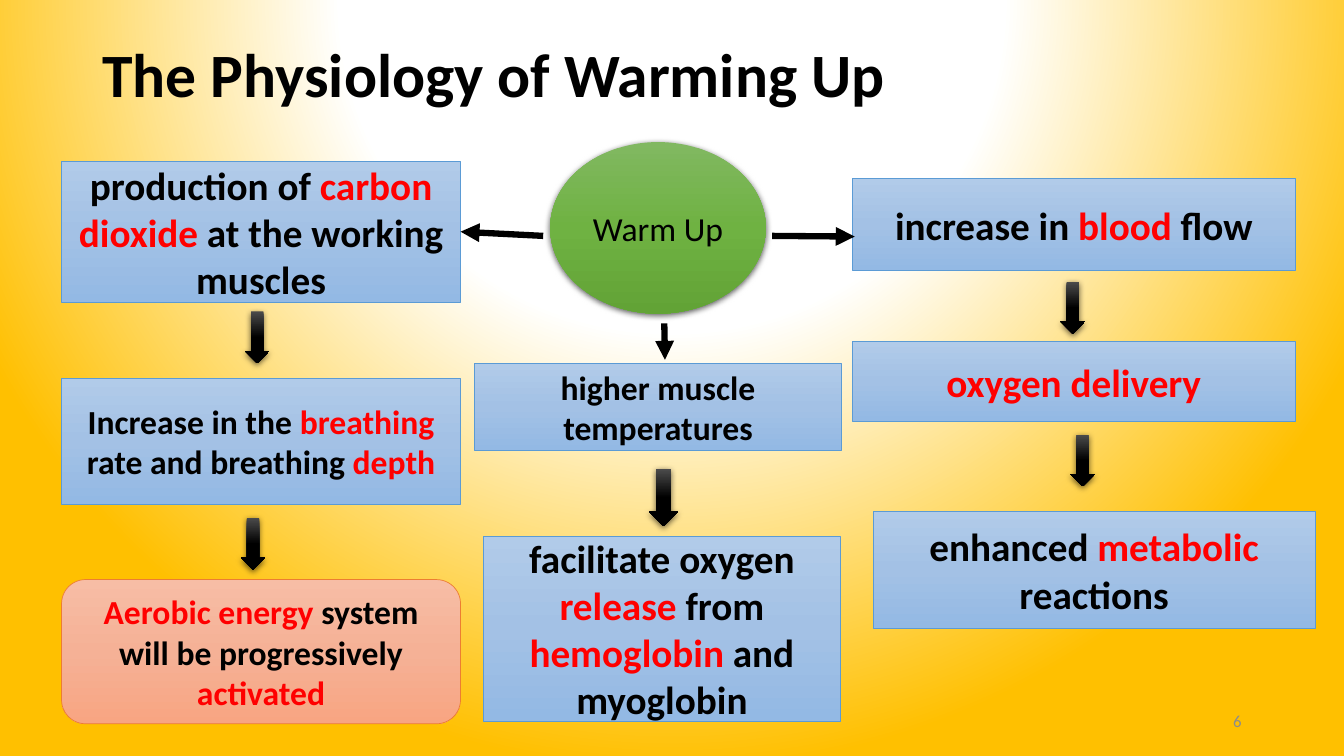
from lxml.etree import SubElement
from pptx import Presentation
from pptx.dml.color import RGBColor
from pptx.enum.shapes import MSO_CONNECTOR as CONNECTOR, MSO_SHAPE as SHAPE
from pptx.enum.text import MSO_ANCHOR as ANCHOR, MSO_AUTO_SIZE as AUTO_SIZE, PP_ALIGN as ALIGN
from pptx.oxml.ns import qn
from pptx.util import Pt

COLORS = {"text": "000000", "key": "FF0000", "number": "8C8C8C",
          "blue_line": "5B9BD5", "orange_line": "ED7D31"}
GRADIENTS = {
    "page": [(0, "FFFFFF"), (43, "FFFFFF"), (100, "FFC000")],
    "blue": [(0, "B1CBE9"), (50, "A3C1E5"), (100, "93B9E4")],
    "orange": [(0, "F7BDA5"), (50, "F5B196"), (100, "F8A582")],
    "green": [(0, "81B861"), (50, "6FB242"), (100, "62A336")],
    "black": [(0, "4B4B4B"), (50, "000000"), (100, "000000")],
}


def color(name):
    return RGBColor.from_string(COLORS[name])


def set_stops(element, name):
    gradient = next(element.iter(qn("a:gradFill")))
    stops = gradient.find(qn("a:gsLst"))
    for stop in list(stops):
        stops.remove(stop)
    for position, value in GRADIENTS[name]:
        stop = SubElement(stops, qn("a:gs"), pos=str(position * 1000))
        SubElement(stop, qn("a:srgbClr"), val=value)
    return gradient


def paint_background(page):
    page.background.fill.gradient()
    gradient = set_stops(page._element, "page")
    gradient.remove(gradient.find(qn("a:lin")))
    circle = SubElement(gradient, qn("a:path"), path="circle")
    SubElement(circle, qn("a:fillToRect"), l="50000", t="-80000", r="50000", b="180000")


def write(box, text, size, bold=True, align=ALIGN.CENTER, ink="text"):
    frame = box.text_frame
    frame.word_wrap = True
    frame.auto_size = AUTO_SIZE.NONE
    frame.vertical_anchor = ANCHOR.MIDDLE
    para = frame.paragraphs[0]
    para.alignment = align
    para.font.name = "Calibri"
    para.font.size = Pt(size)
    para.font.bold = bold
    for index, part in enumerate(text.split("*")):
        if part:
            span = para.add_run()
            span.text = part
            span.font.color.rgb = color("key" if index % 2 else ink)
    return para


def add_box(page, kind, bounds, gradient, line=None, shadow=False):
    box = page.shapes.add_shape(kind, *map(Pt, bounds))
    box.shadow.inherit = False
    box.fill.gradient()
    box.fill.gradient_angle = 270
    set_stops(box._element, gradient)
    if line:
        box.line.color.rgb = color(line)
        box.line.width = Pt(0.5)
    else:
        box.line.fill.background()
    if shadow:
        effects = box._element.spPr.find(qn("a:effectLst"))
        outer = SubElement(effects, qn("a:outerShdw"), blurRad=str(Pt(4.5)), dist=str(Pt(1.5)),
                           dir="5400000", algn="ctr", rotWithShape="0")
        black = SubElement(outer, qn("a:srgbClr"), val="000000")
        SubElement(black, qn("a:alpha"), val="63000")
    return box


def add_arrow(page, start, end):
    arrow = page.shapes.add_connector(CONNECTOR.STRAIGHT, *map(Pt, start + end))
    arrow.line.color.rgb = color("text")
    arrow.line.width = Pt(4.5)
    SubElement(arrow.line._get_or_add_ln(), qn("a:tailEnd"), type="triangle")
    SubElement(arrow._element.spPr, qn("a:effectLst"))
    return arrow


def add_title(page, left, top, width, height):
    title = page.shapes.title
    title.left, title.top, title.width, title.height = map(Pt, (left, top, width, height))
    para = write(title, "The Physiology of Warming Up", 44, align=ALIGN.LEFT)
    para.line_spacing = 0.9


def add_chain(page, left, top, steps, arrows):
    boxes = []
    for x, y, width, height, size, text, style in steps:
        kind = SHAPE.ROUNDED_RECTANGLE if style == "orange" else SHAPE.RECTANGLE
        box = add_box(page, kind, (left + x, top + y, width, height), style, style + "_line")
        write(box, text, size)
        boxes.append(box)
    for x, y, width, height in arrows:
        add_box(page, SHAPE.DOWN_ARROW, (left + x, top + y, width, height), "black", shadow=True)
    return boxes


def add_breathing_chain(page, left, top):
    return add_chain(page, left, top, [
        (0, 0, 285, 101, 28, "production of *carbon dioxide* at the working muscles", "blue"),
        (0, 155, 285, 90, 24, "Increase in the *breathing* rate and breathing *depth*", "blue"),
        (0, 299, 285, 103, 24, "*Aerobic energy *system will be progressively *activated*", "orange"),
    ], [(131, 107.5, 17.5, 37), (128, 255, 17.5, 37)])


def add_temperature_chain(page, left, top):
    add_chain(page, left, top, [
        (0, 0, 262, 62, 24, "higher muscle temperatures", "blue"),
        (6, 123.5, 255.5, 132, 28,
         "facilitate oxygen *release *from *hemoglobin *and myoglobin", "blue"),
    ], [(124.5, 75.5, 21, 41)])


def add_blood_chain(page, left, top):
    add_chain(page, left, top, [
        (0, 0, 316, 66, 28, "increase in *blood* flow", "blue"),
        (0, 116.5, 316, 57, 28, "*oxygen delivery*", "blue"),
        (14.5, 237.5, 316, 84, 28, "enhanced *metabolic* reactions", "blue"),
    ], [(148.5, 74, 17.5, 37), (155.5, 183, 17.5, 37)])


def add_warm_up(page, left, top, width, height, left_box):
    circle = add_box(page, SHAPE.OVAL, (left, top, width, height), "green", shadow=True)
    write(circle, "Warm Up", 24, bold=False)
    to_left = add_arrow(page, (left - 5, top + 67), (left - 64, top + 64))
    to_left.end_connect(left_box, 3)
    add_arrow(page, (left + width + 4.5, top + 67), (left + width + 63.5, top + 67.5))
    add_arrow(page, (left + 81.5, top + 129.5), (left + 82, top + 155.5))


def add_page_number(page, left, top, width, height):
    box = page.shapes.add_textbox(*map(Pt, (left, top, width, height)))
    write(box, "6", 12, bold=False, align=ALIGN.RIGHT, ink="number")


def main():
    deck = Presentation()
    deck.slide_width, deck.slide_height = Pt(960), Pt(540)
    page = deck.slides.add_slide(deck.slide_layouts[5])
    paint_background(page)
    add_title(page, 66, 22, 828, 67)
    breathing = add_breathing_chain(page, 44, 115)
    add_blood_chain(page, 609, 127.5)
    add_temperature_chain(page, 339, 259.5)
    add_warm_up(page, 393, 101.5, 154, 122.5, breathing[0])
    add_page_number(page, 678, 500.5, 216, 29)
    deck.save("out.pptx")


if __name__ == "__main__":
    main()
